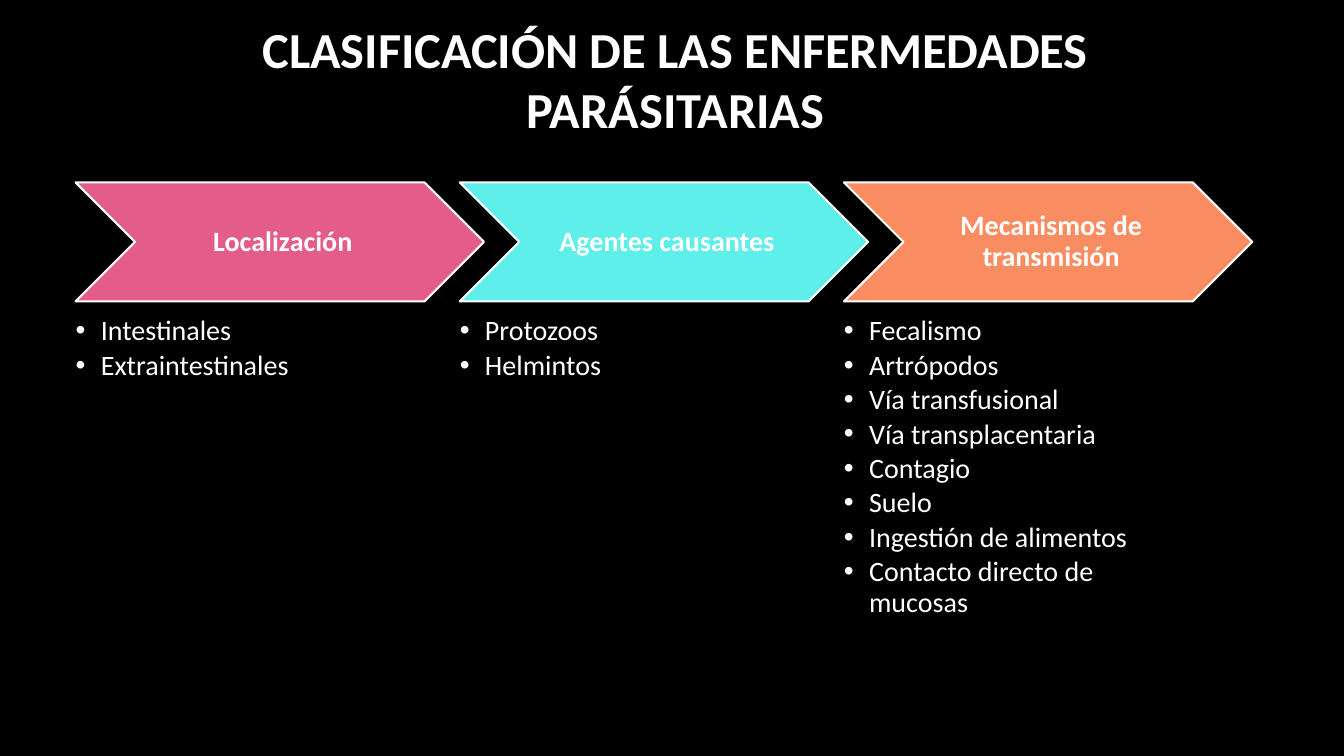
from dataclasses import dataclass

from lxml import etree
from pptx import Presentation
from pptx.dml.color import RGBColor
from pptx.enum.shapes import MSO_SHAPE
from pptx.enum.text import MSO_ANCHOR, MSO_AUTO_SIZE, PP_ALIGN
from pptx.oxml.ns import qn
from pptx.util import Inches, Pt

CHEVRON = MSO_SHAPE.CHEVRON
TOP, MIDDLE = MSO_ANCHOR.TOP, MSO_ANCHOR.MIDDLE
NO_AUTOFIT = MSO_AUTO_SIZE.NONE
LEFT, CENTER = PP_ALIGN.LEFT, PP_ALIGN.CENTER

TITLE = "CLASIFICACIÓN DE LAS ENFERMEDADES PARÁSITARIAS"
CATEGORIES = [
    ("Localización", "E45C8A", ["Intestinales", "Extraintestinales"]),
    ("Agentes causantes", "5EEFEB", ["Protozoos", "Helmintos"]),
    ("Mecanismos de transmisión", "F98C61", [
        "Fecalismo",
        "Artrópodos",
        "Vía transfusional",
        "Vía transplacentaria",
        "Contagio",
        "Suelo",
        "Ingestión de alimentos",
        "Contacto directo de mucosas",
    ]),
]


@dataclass(frozen=True)
class Theme:
    font: str = "Calibri"
    background: str = "000000"
    text: str = "FFFFFF"
    title_size: int = 36
    body_size: int = 20
    outline_width: float = 1.5


THEME = Theme()
COMPARISON_LAYOUT = 4
COLUMN_LEFT, COLUMN_PITCH = 0.75, 3.81
CHEVRON_TOP, CHEVRON_WIDTH, CHEVRON_HEIGHT = 1.81, 4.05, 1.18
LIST_TOP, LIST_WIDTH, LIST_HEIGHT = 3.14, 3.24, 3.16
BULLET_INDENT = Inches(0.25)


def color(value):
    return RGBColor.from_string(value)


def place(shape, left, top, width, height):
    shape.left, shape.top = Inches(left), Inches(top)
    shape.width, shape.height = Inches(width), Inches(height)


def set_frame(frame, anchor, insets):
    frame.word_wrap = True
    frame.auto_size = NO_AUTOFIT
    frame.vertical_anchor = anchor
    (frame.margin_left, frame.margin_top,
     frame.margin_right, frame.margin_bottom) = map(Inches, insets)


def style(para, size, bold, alignment, line_spacing=0.9):
    para.alignment = alignment
    para.line_spacing = line_spacing
    para.space_before = Pt(0)
    para.font.name = THEME.font
    para.font.size = Pt(size)
    para.font.bold = bold
    para.font.color.rgb = color(THEME.text)


def add_bullet(para):
    properties = para._p.get_or_add_pPr()
    properties.set("marL", str(BULLET_INDENT))
    properties.set("indent", str(-BULLET_INDENT))
    etree.SubElement(properties, qn("a:buFont")).set("typeface", "Arial")
    etree.SubElement(properties, qn("a:buChar")).set("char", "•")


def fill_title(title):
    place(title, 1.57, 0.12, 10.26, 1.31)
    set_frame(title.text_frame, MIDDLE, (0.1, 0.05, 0.1, 0.05))
    title.text_frame.text = TITLE
    style(title.text_frame.paragraphs[0], THEME.title_size, True, CENTER, 1.0)


def add_chevron(slide, left, heading, fill):
    chevron = slide.shapes.add_shape(
        CHEVRON, Inches(left), Inches(CHEVRON_TOP),
        Inches(CHEVRON_WIDTH), Inches(CHEVRON_HEIGHT))
    chevron.shadow.inherit = False
    chevron.fill.solid()
    chevron.fill.fore_color.rgb = color(fill)
    chevron.line.color.rgb = color(THEME.text)
    chevron.line.width = Pt(THEME.outline_width)
    set_frame(chevron.text_frame, MIDDLE, (0.09, 0.03, 0.03, 0.03))
    chevron.text_frame.text = heading
    style(chevron.text_frame.paragraphs[0], THEME.body_size, True, CENTER)


def fill_list(box, left, items):
    place(box, left, LIST_TOP, LIST_WIDTH, LIST_HEIGHT)
    set_frame(box.text_frame, TOP, (0, 0, 0, 0))
    box.text_frame.text = "\n".join(items)
    for para in box.text_frame.paragraphs:
        add_bullet(para)
        style(para, THEME.body_size, False, LEFT)
        para.space_after = Pt(0.15 * THEME.body_size)


def main():
    deck = Presentation()
    deck.slide_width, deck.slide_height = Inches(13.33), Inches(7.5)
    slide = deck.slides.add_slide(deck.slide_layouts[COMPARISON_LAYOUT])
    slide.background.fill.solid()
    slide.background.fill.fore_color.rgb = color(THEME.background)

    title, *bodies = slide.placeholders
    fill_title(title)
    for column, (heading, fill, items) in enumerate(CATEGORIES):
        left = COLUMN_LEFT + column * COLUMN_PITCH
        add_chevron(slide, left, heading, fill)
        fill_list(bodies[column], left, items)
    for unused in bodies[len(CATEGORIES):]:
        unused.element.getparent().remove(unused.element)

    deck.save("out.pptx")


if __name__ == "__main__":
    main()
